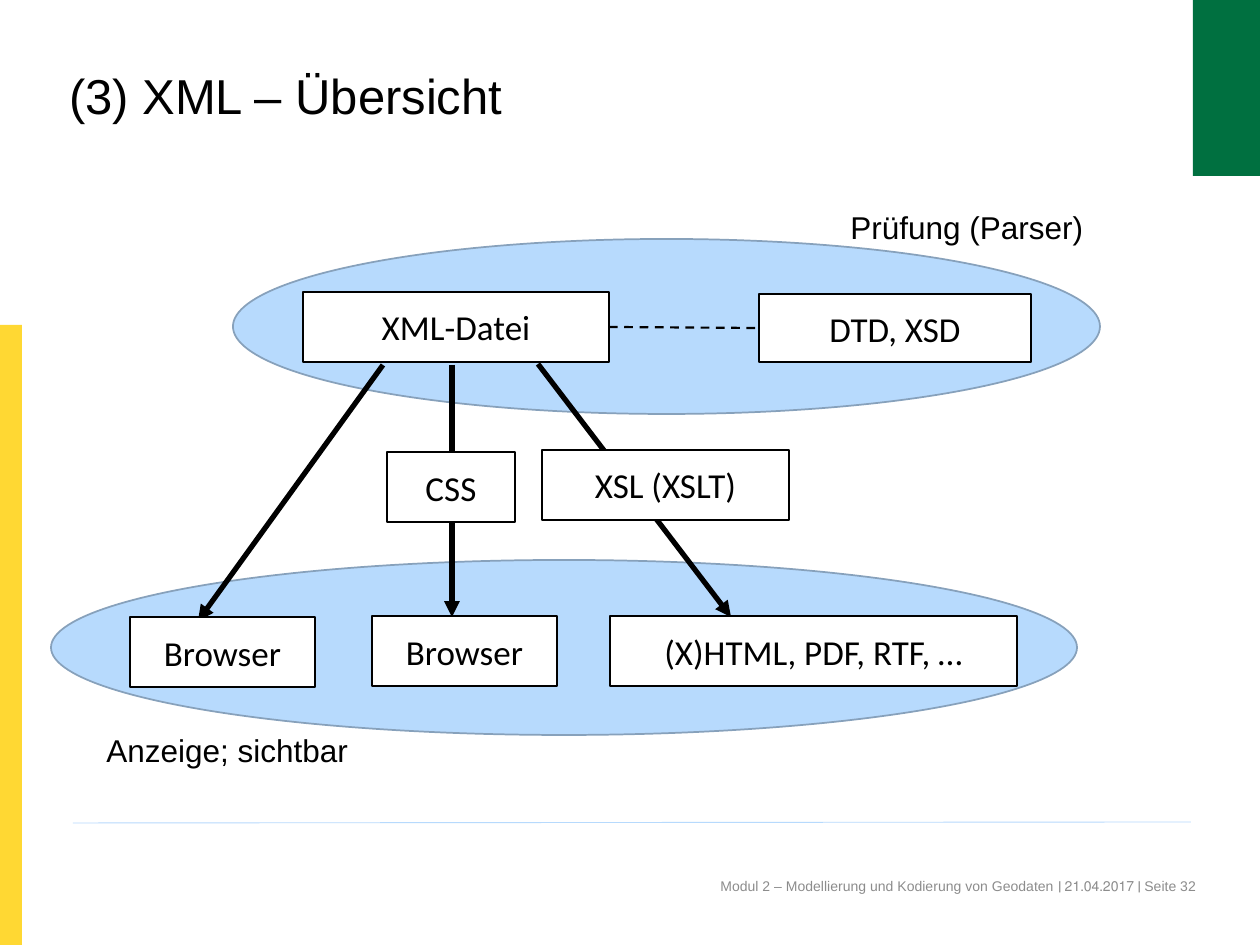
from lxml.etree import SubElement
from pptx import Presentation
from pptx.dml.color import RGBColor
from pptx.enum.dml import MSO_LINE
from pptx.enum.shapes import MSO_CONNECTOR, MSO_SHAPE
from pptx.enum.text import MSO_ANCHOR, PP_ALIGN
from pptx.oxml.ns import qn
from pptx.util import Pt

EMU_PER_PX = 914400 / 126
BLACK, WHITE, LIGHT_BLUE = "000000", "FFFFFF", "B7DAFD"


def px(*lengths):
    return [round(length * EMU_PER_PX) for length in lengths]


def color(hex_code):
    return RGBColor.from_string(hex_code)


def write(shape, text, size, font="Arial", hex_code=BLACK, align=PP_ALIGN.LEFT):
    """Set the shape's single paragraph and return it."""
    para = shape.text_frame.paragraphs[0]
    para.text = text
    para.alignment = align
    para.font.size = Pt(size)
    para.font.name = font
    para.font.color.rgb = color(hex_code)
    return para


def set_insets(frame, bottom=0):
    frame.margin_left = frame.margin_top = frame.margin_right = 0
    frame.margin_bottom = px(bottom)[0]


def add_area(slide, kind, bounds, fill, line=None, width=0.75):
    shape = slide.shapes.add_shape(kind, *px(*bounds))
    shape.shadow.inherit = False
    shape.fill.solid()
    shape.fill.fore_color.rgb = color(fill)
    if line:
        shape.line.color.rgb = color(line)
        shape.line.width = Pt(width)
    else:
        shape.line.fill.background()
    return shape


def add_ellipse(slide, bounds):
    return add_area(slide, MSO_SHAPE.OVAL, bounds, LIGHT_BLUE, "87A1BB", 1)


def add_box(slide, text, bounds):
    box = add_area(slide, MSO_SHAPE.RECTANGLE, bounds, WHITE, BLACK)
    box.text_frame.word_wrap = False
    box.text_frame.vertical_anchor = MSO_ANCHOR.MIDDLE
    write(box, text, 20, "Calibri", align=PP_ALIGN.CENTER)
    return box


def add_label(slide, text, bounds, size=18, **style):
    label = slide.shapes.add_textbox(*px(*bounds))
    label.text_frame.word_wrap = True
    write(label, text, size, **style)
    return label


def add_line(slide, ends, width, hex_code=BLACK):
    line = slide.shapes.add_connector(MSO_CONNECTOR.STRAIGHT, *px(*ends))
    line.line.width = Pt(width)
    line.line.color.rgb = color(hex_code)
    SubElement(line._element.spPr, qn("a:effectLst"))
    return line


def add_arrow(slide, ends):
    arrow = add_line(slide, ends, 3)
    SubElement(arrow.line._get_or_add_ln(), qn("a:tailEnd"), type="triangle")


def add_frame(slide):
    """Draw the colour bars, footer and title around the diagram."""
    add_area(slide, MSO_SHAPE.RECTANGLE, (0, 325, 22, 620), "FFD833")
    add_area(slide, MSO_SHAPE.RECTANGLE, (1193, 0, 67, 176), "007040")
    footer = add_label(
        slide,
        "Modul 2 – Modellierung und Kodierung von Geodaten ׀ 21.04.2017 ׀ Seite 32",
        (630, 878, 566, 50), 8, hex_code="8C8C8C", align=PP_ALIGN.RIGHT)
    set_insets(footer.text_frame, bottom=6)
    add_line(slide, (73, 823, 1191, 822), 0.5, LIGHT_BLUE)

    title = slide.shapes.title
    title.left, title.top, title.width, title.height = px(69, 67, 706, 127)
    set_insets(title.text_frame)
    title.text_frame.vertical_anchor = MSO_ANCHOR.TOP
    write(title, "(3) XML – Übersicht", 28).line_spacing = Pt(33)


def add_diagram(slide):
    add_ellipse(slide, (51, 560, 1026, 175))
    add_label(slide, "Anzeige; sichtbar", (94, 725, 304, 50))
    add_ellipse(slide, (233, 239, 867, 175))
    add_label(slide, "Prüfung (Parser)", (838, 202, 304, 50))

    add_arrow(slide, (383, 365, 198, 621))
    xml_file = add_box(slide, "XML-Datei", (303, 292, 306, 70))
    add_box(slide, "Browser", (130, 617, 185, 70))
    add_box(slide, "(X)HTML, PDF, RTF, …", (610, 616, 407, 70))
    add_box(slide, "Browser", (372, 616, 185, 70))
    add_arrow(slide, (452, 365, 452, 617))
    add_box(slide, "CSS", (387, 452, 128, 70))
    add_arrow(slide, (538, 364, 731, 617))
    add_box(slide, "XSL (XSLT)", (542, 450, 247, 70))

    schema = add_box(slide, "DTD, XSD", (759, 294, 272, 68))
    link = add_line(slide, (609, 328, 759, 328), 1.25)
    link.line.dash_style = MSO_LINE.DASH
    link.begin_connect(xml_file, 3)
    link.end_connect(schema, 1)


def main():
    deck = Presentation()
    deck.slide_width, deck.slide_height = px(1260, 945)
    slide = deck.slides.add_slide(deck.slide_layouts[5])
    add_frame(slide)
    add_diagram(slide)
    deck.save("out.pptx")


if __name__ == "__main__":
    main()
